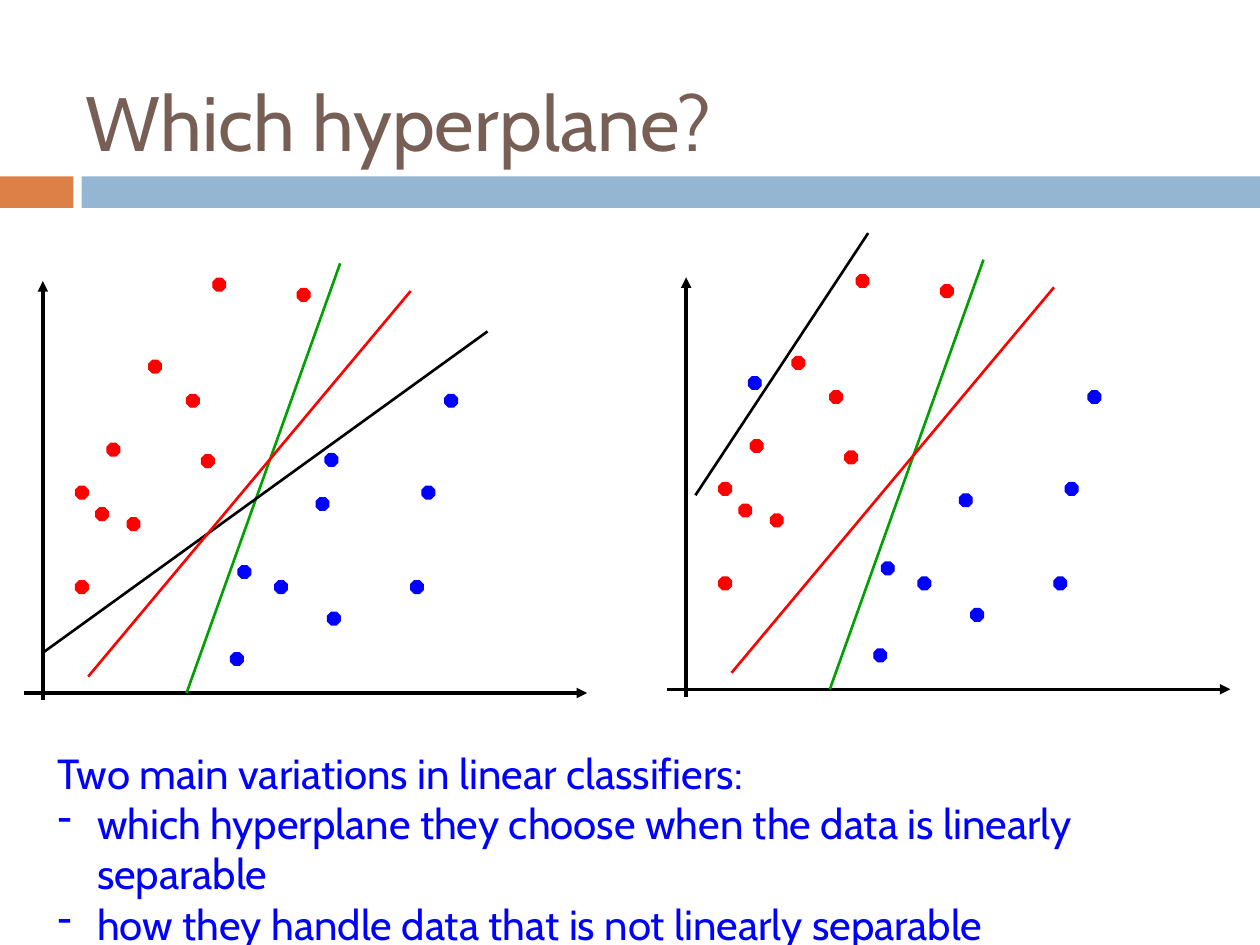
from lxml.etree import SubElement
from pptx import Presentation
from pptx.dml.color import RGBColor
from pptx.enum.shapes import MSO_CONNECTOR, MSO_SHAPE
from pptx.enum.text import MSO_ANCHOR, PP_ALIGN
from pptx.oxml.ns import qn
from pptx.util import Pt

FONT = "Cabin"
HUES = {"title": "775F55", "orange": "DD8047", "band": "94B6D2",
        "black": "000000", "red": "FF0000", "blue": "0000FF",
        "green": "00A000"}

# Places are points from the top left corner of a plot.
DOTS = {
    "red": [(92.9, 75.4), (47.5, 103.4), (59, 145.9), (29.5, 181.9),
            (71.3, 55.9), (29.5, 127.9), (41, 140.2), (101.5, 109.9),
            (108, 9.1), (156.2, 14.9)],
    "blue": [(143.3, 181.9), (221, 181.9), (118.1, 223), (167, 134.4),
             (122.4, 173.3), (173.5, 199.9), (227.5, 127.9), (240.5, 75.4)],
}
SIZE = 7.2
GREEN = (92.9, 246), (180.7, 0.5)
RED = (36.7, 236.6), (221, 16.3)


def color(name):
    return RGBColor.from_string(HUES[name])


def write(para, text, size=24, hue="blue", bullet=None, indent=22.5):
    para.alignment = PP_ALIGN.LEFT
    run = para.add_run()
    run.text = text
    run.font.name = FONT
    run.font.size = Pt(size)
    run.font.color.rgb = color(hue)
    if bullet:
        props = para._p.get_or_add_pPr()
        props.set("marL", str(Pt(indent)))
        props.set("indent", str(-Pt(indent)))
        SubElement(props, qn("a:buChar"), char=bullet)


def shape(slide, kind, box, hue, edge=None):
    item = slide.shapes.add_shape(kind, *map(Pt, box))
    item.shadow.inherit = False
    item.fill.solid()
    item.fill.fore_color.rgb = color(hue)
    if edge:
        item.line.color.rgb = color(hue)
        item.line.width = Pt(edge)
    else:
        item.line.fill.background()


def line(slide, start, end, hue="black", width=1.5, arrow=False):
    item = slide.shapes.add_connector(
        MSO_CONNECTOR.STRAIGHT, *map(Pt, (*start, *end)))
    item.line.color.rgb = color(hue)
    item.line.width = Pt(width)
    if arrow:
        SubElement(item.line._get_or_add_ln(), qn("a:tailEnd"),
                   type="triangle")
    SubElement(item._element.spPr, qn("a:effectLst"))


def header(slide, box):
    """Place the title and the two-colour band below it."""
    left, top, width, height = box
    title = slide.shapes.title
    title.left, title.top = Pt(left + 41.8), Pt(top)
    title.width, title.height = Pt(635.8), Pt(77.8)
    frame = title.text_frame
    frame.vertical_anchor = MSO_ANCHOR.MIDDLE
    write(frame.paragraphs[0], "Which hyperplane?", size=44, hue="title")
    band = top + height - 18
    shape(slide, MSO_SHAPE.RECTANGLE, (left, band, 42, 18), "orange")
    shape(slide, MSO_SHAPE.RECTANGLE,
          (left + 46.6, band, width - 46.6, 18), "band")


def plot(slide, box, extra, cut):
    """Draw axes, points and separators; extra is one more blue point."""
    left, top, width, height = box

    def at(spot):
        return left + spot[0], top + spot[1]

    base = height - 4.3
    axes = [((10.8, height), (10.8, 10.6)), ((0, base), (width, base))]
    for start, end in axes:
        line(slide, at(start), at(end), width=2, arrow=True)
    for hue, spots in {**DOTS, "blue": DOTS["blue"] + [extra]}.items():
        for spot in spots:
            shape(slide, MSO_SHAPE.OCTAGON, (*at(spot), SIZE, SIZE),
                  hue, edge=0.75)
    for hue, (start, end) in {"green": GREEN, "black": cut,
                              "red": RED}.items():
        line(slide, at(start), at(end), hue)


def notes(slide, box):
    """Write the summary text below the plots."""
    frame = slide.shapes.add_textbox(*map(Pt, box)).text_frame
    frame.word_wrap = True
    write(frame.paragraphs[0], "Two main variations in linear classifiers:")
    for text in (
            "which hyperplane they choose when the data is linearly separable",
            "how they handle data that is not linearly separable"):
        write(frame.add_paragraph(), text, bullet="-")


def main():
    deck = Presentation()
    deck.slide_width, deck.slide_height = Pt(720), Pt(540)
    slide = deck.slides.add_slide(deck.slide_layouts[5])
    header(slide, (0, 30.2, 720, 88.6))
    plot(slide, (13.7, 150, 321.8, 250.3), extra=(172.1, 109.2),
         cut=((10.8, 223), (264.9, 39.4)))
    plot(slide, (381.3, 147.9, 321.8, 250.3), extra=(46.4, 67.4),
         cut=((16.1, 135.1), (114.8, -14.7)))
    notes(slide, (25.9, 423.4, 676.8, 94.3))
    deck.save("out.pptx")


if __name__ == "__main__":
    main()
